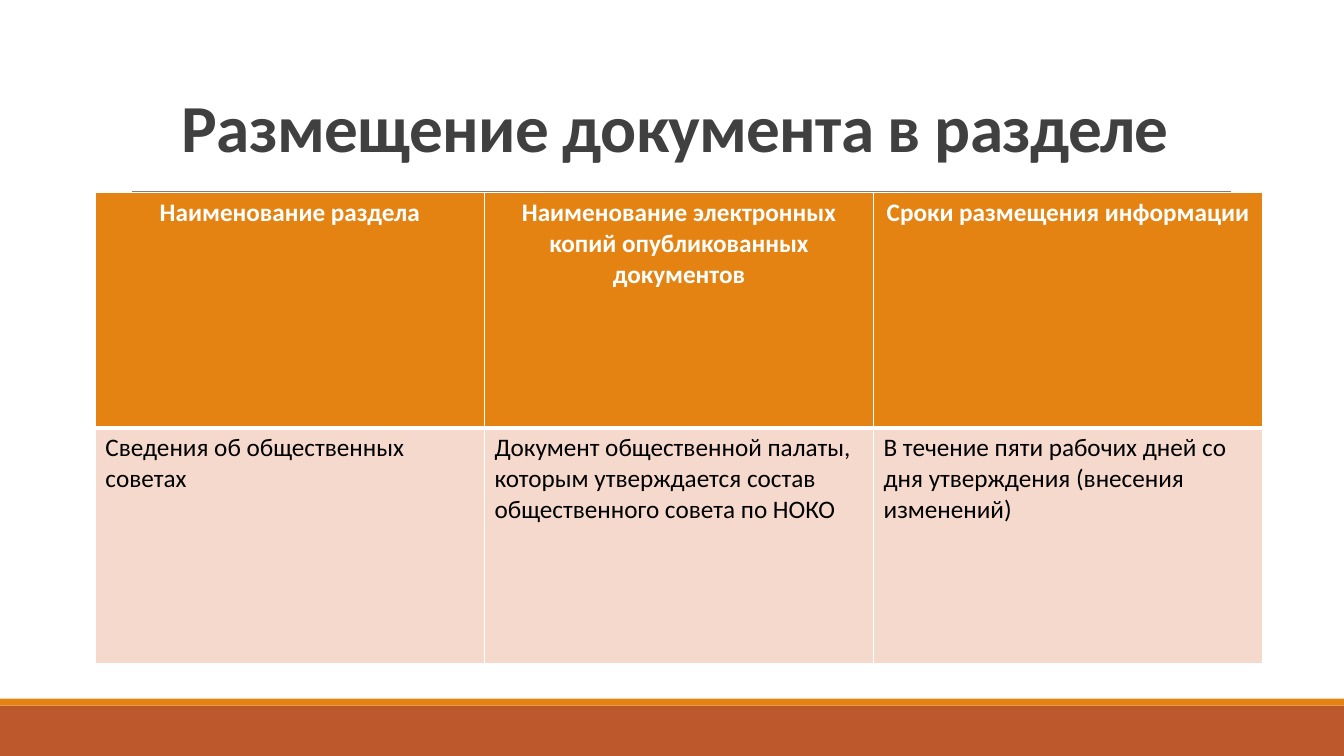
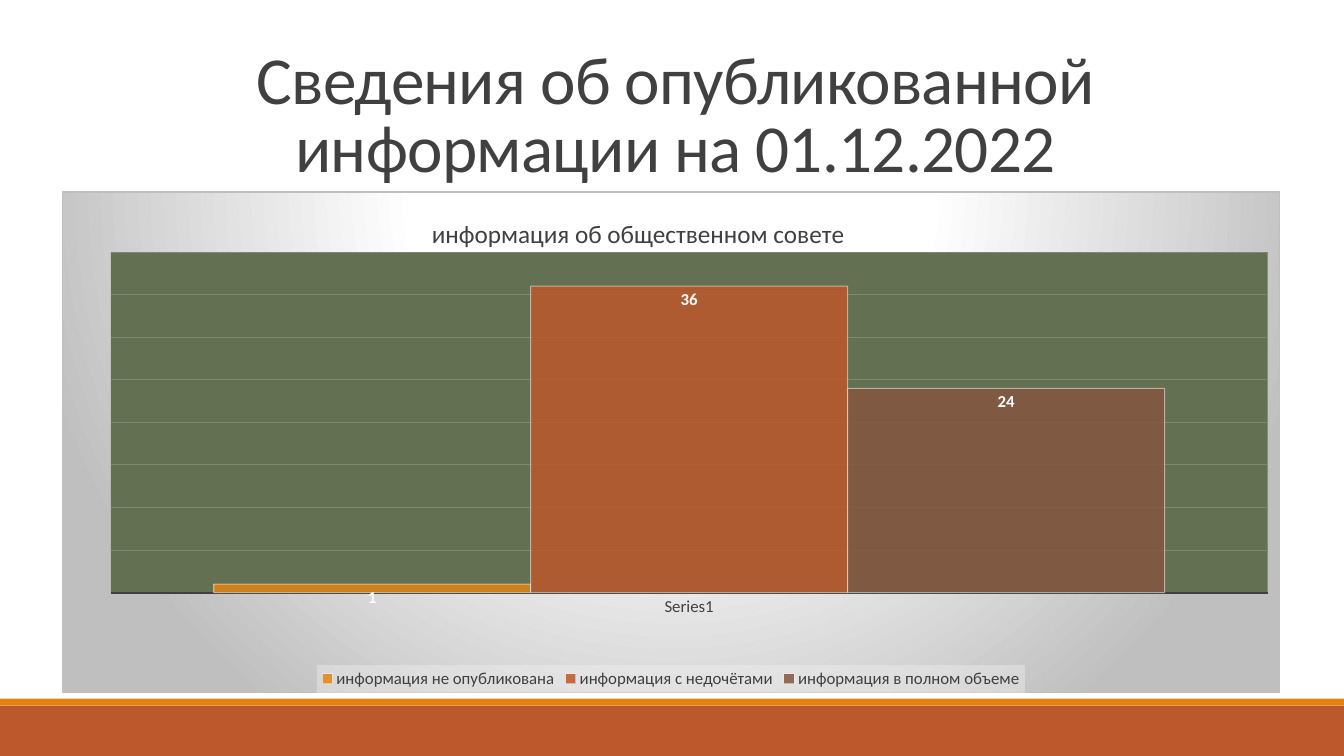
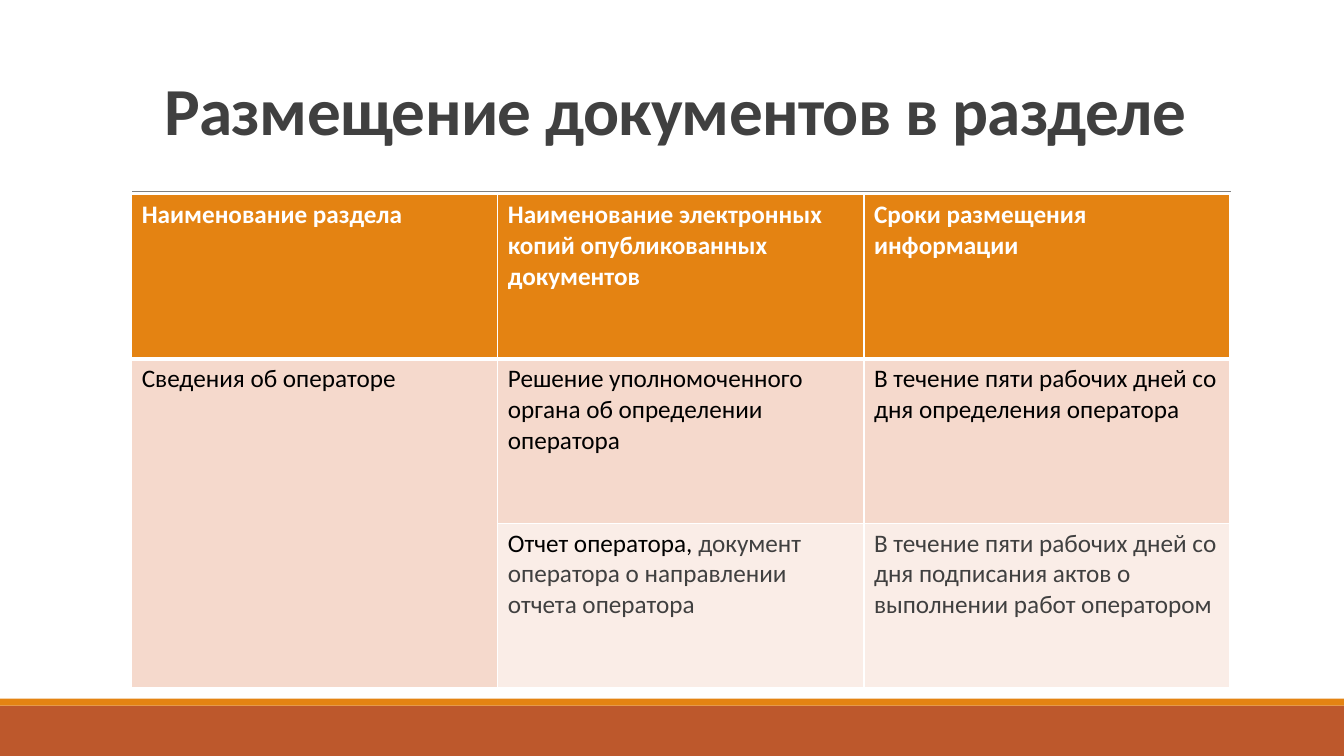
from lxml import etree
from pptx import Presentation
from pptx.chart.data import CategoryChartData
from pptx.dml.color import RGBColor
from pptx.enum.chart import (XL_CHART_TYPE, XL_LABEL_POSITION,
                             XL_LEGEND_POSITION, XL_TICK_MARK)
from pptx.enum.shapes import MSO_CONNECTOR, MSO_SHAPE
from pptx.enum.text import MSO_ANCHOR, MSO_AUTO_SIZE, PP_ALIGN
from pptx.oxml import parse_xml
from pptx.oxml.ns import nsdecls, qn
from pptx.util import Inches, Pt

COLUMNS = XL_CHART_TYPE.COLUMN_CLUSTERED
IN_END = XL_LABEL_POSITION.INSIDE_END
BELOW = XL_LEGEND_POSITION.BOTTOM
NO_TICK = XL_TICK_MARK.NONE
LINE, RECT = MSO_CONNECTOR.STRAIGHT, MSO_SHAPE.RECTANGLE
LOW, NO_FIT = MSO_ANCHOR.BOTTOM, MSO_AUTO_SIZE.NONE
LEFT, MID = PP_ALIGN.LEFT, PP_ALIGN.CENTER

WHITE = RGBColor(0xFF, 0xFF, 0xFF)
BLACK = RGBColor(0, 0, 0)
DARK = RGBColor(0x40, 0x40, 0x40)
GREY = RGBColor(0x80, 0x80, 0x80)
SILVER = RGBColor(0xBF, 0xBF, 0xBF)
PALE = RGBColor(0xF2, 0xF2, 0xF2)
ORANGE = RGBColor(0xE4, 0x83, 0x12)
RUST = RGBColor(0xBD, 0x58, 0x2C)
BROWN = RGBColor(0x86, 0x56, 0x40)
GREEN = RGBColor(0x63, 0x70, 0x52)
GRID = RGBColor(0x7D, 0x89, 0x70)
PEACH = RGBColor(0xF5, 0xD9, 0xCC)
CREAM = RGBColor(0xFA, 0xED, 0xE7)

FONT = "Calibri"
WIDE, HIGH = Inches(13.333), Inches(7.5)
COL, ROW = WIDE / 100, HIGH / 100  # grid of 100 columns and 100 rows


def box(left, top, width, height):
    """Grid columns and rows to lengths."""
    return [round(n) for n in (left * COL, top * ROW, width * COL, height * ROW)]


def style(font, size, color, bold=False):
    look = {"name": FONT, "size": Pt(size), "bold": bold}
    for key, value in look.items():
        setattr(font, key, value)
    font.color.rgb = color


# Shared look
def dress(slide):
    """Put the bands and the rule on the slide's layout."""
    layout = slide.slide_layout
    for holder in list(layout.placeholders):
        if holder.placeholder_format.idx:
            holder.element.getparent().remove(holder.element)
    parts = []
    for top, height, color in ((93.33, 6.67, RUST), (92.4, 0.93, ORANGE)):
        band = slide.shapes.add_shape(RECT, *box(0, top, 100, height))
        band.shadow.inherit = False
        band.fill.solid()
        band.fill.fore_color.rgb = color
        band.line.fill.background()
        parts.append(band)
    left, top, width, _ = box(9.83, 25.33, 81.75, 0)
    rule = slide.shapes.add_connector(LINE, left, top, left + width, top)
    rule.line.color.rgb = GREY
    rule.line.width = Pt(0.5)
    etree.SubElement(rule.element.spPr, qn("a:effectLst"))
    parts.append(rule)
    for part in parts:
        layout.shapes.element.append(part.element)


def head(slide, text, rows, bold):
    title = slide.shapes.title
    place = box(9, 4.13, 82.5, rows)
    for key, value in zip(("left", "top", "width", "height"), place):
        setattr(title, key, value)
    frame = title.text_frame
    frame.text = text
    look = {"word_wrap": True, "auto_size": NO_FIT, "vertical_anchor": LOW}
    for key, value in look.items():
        setattr(frame, key, value)
    para = frame.paragraphs[0]
    para.alignment, para.line_spacing = MID, 0.85
    run = para.runs[0]
    style(run.font, 48, DARK, bold)
    run._r.get_or_add_rPr().set("spc", "-50")


# Table
def edge(cell, base):
    """White cell borders; base is the width of the lower one."""
    props = cell._tc.get_or_add_tcPr()
    for side, width in zip("LRTB", (1, 1, 1, base)):
        props.append(parse_xml(
            f'<a:ln{side} {nsdecls("a")} w="{Pt(width)}"><a:solidFill>'
            f'<a:srgbClr val="{WHITE}"/></a:solidFill></a:ln{side}>'))


def grid(slide, place, rows, align):
    """Rows hold cells; a cell is a list of (text, colour) runs."""
    count = len(rows[0])
    left, top, width, height = place
    table = slide.shapes.add_table(len(rows), count, *place).table
    for col in table.columns:
        col.width = round(width / count)
    for i, row in enumerate(rows):
        table.rows[i].height = round(height / len(rows))
        for j, runs in enumerate(row):
            cell = table.cell(i, j)
            edge(cell, 1 if i else 3)
            cell.fill.solid()
            cell.fill.fore_color.rgb = (ORANGE, PEACH, CREAM)[i]
            para = cell.text_frame.paragraphs[0]
            para.alignment = LEFT if i else align
            for text, color in runs:
                run = para.add_run()
                run.text = text
                style(run.font, 18, color, i == 0)
    return table


# Chart
def pin(node, spot, **shares):
    """Set a manual layout in a chart part."""
    old = node.find(qn("c:layout"))
    if old is not None:
        node.remove(old)
    inner = '<c:layoutTarget val="inner"/>' if "w" in shares else ""
    modes = "".join(f'<c:{k}Mode val="edge"/>' for k in "xy")
    sizes = "".join(f'<c:{k} val="{v}"/>' for k, v in shares.items())
    node.insert(spot, parse_xml(
        f'<c:layout {nsdecls("c")}><c:manualLayout>{inner}{modes}{sizes}'
        '</c:manualLayout></c:layout>'))


def paint(fill, line="<a:ln><a:noFill/></a:ln>"):
    return parse_xml(f'<c:spPr {nsdecls("c", "a")}>{fill}{line}</c:spPr>')


def solid(color, alpha=100):
    return (f'<a:solidFill><a:srgbClr val="{color}"><a:alpha val="{alpha * 1000}"/>'
            '</a:srgbClr></a:solidFill>')


def back(chart):
    """Backgrounds of the chart, its plot area and its legend."""
    stops = "".join(f'<a:gs pos="{spot * 1000}"><a:srgbClr val="{color}"/></a:gs>'
                    for spot, color in ((0, WHITE), (39, WHITE), (100, SILVER)))
    glow = (f'<a:gradFill><a:gsLst>{stops}</a:gsLst><a:path path="circle">'
            '<a:fillToRect l="50000" t="-80000" r="50000" b="180000"/>'
            '</a:path></a:gradFill>')
    frame = f'<a:ln w="{Pt(0.75)}">{solid(SILVER)}</a:ln>'
    root = chart._chartSpace.find(qn("c:chart"))
    root.addnext(paint(glow, frame))
    plot = root.find(qn("c:plotArea"))
    pin(plot, 0, x=0.04, y=0.12, w=0.95, h=0.68)
    plot.append(paint(solid(GREEN)))
    mark = chart.legend._element.find(qn("c:overlay"))
    mark.addnext(paint(solid(PALE, 39)))


def bars(slide, place, title, series):
    data = CategoryChartData()
    data.categories = ["Series1"]
    for name, value, _ in series:
        data.add_series(name, [value])
    chart = slide.shapes.add_chart(COLUMNS, *place, data).chart
    style(chart.font, 10, BLACK)

    # Title and legend
    chart.has_title = True
    head = chart.chart_title
    head.text_frame.text = title
    style(head.text_frame.paragraphs[0].runs[0].font, 18, DARK)
    pin(head._element, 1, x=0.3, y=0.04)
    chart.has_legend = True
    chart.legend.position = BELOW
    chart.legend.include_in_layout = False
    style(chart.legend.font, 12, DARK)

    # Axes
    base, scale = chart.category_axis, chart.value_axis
    base.major_tick_mark = NO_TICK
    style(base.tick_labels.font, 12, DARK)
    look = {"visible": False, "has_major_gridlines": True,
            "minimum_scale": 0, "maximum_scale": 40, "major_unit": 5}
    for key, value in look.items():
        setattr(scale, key, value)
    lines = ((base.format.line, DARK, 1.5),
             (scale.major_gridlines.format.line, GRID, 0.75))
    for line, color, width in lines:
        line.color.rgb, line.width = color, Pt(width)

    # Bars
    plot = chart.plots[0]
    plot.gap_width, plot.overlap, plot.vary_by_categories = 65, 0, False
    for bar, (_, _, color) in zip(plot.series, series):
        form = bar.format
        form.fill.solid()
        form.fill.fore_color.rgb = color
        form.line.color.rgb, form.line.width = WHITE, Pt(0.75)
        tints = list(bar._element.iter(qn("a:srgbClr")))
        for tint, share in zip(tints, (85, 50)):
            etree.SubElement(tint, qn("a:alpha")).set("val", str(share * 1000))
        label = bar.data_labels
        label.show_value, label.position = True, IN_END
        style(label.font, 12, WHITE, True)
    back(chart)


def main():
    deck = Presentation()
    deck.slide_width, deck.slide_height = WIDE, HIGH
    first, second, third = [deck.slides.add_slide(deck.slide_layouts[5])
                            for _ in range(3)]
    dress(first)
    names = [[(text, WHITE)] for text in (
        "Наименование раздела",
        "Наименование электронных копий опубликованных документов",
        "Сроки размещения информации")]

    # Council table
    head(first, "Размещение документа в разделе", 18.53, True)
    grid(first, box(7.1, 25.47, 86.85, 62.27), [names, [
        [("Сведения об общественных советах", BLACK)],
        [("Документ общественной палаты, которым утверждается состав "
          "общественного совета по НОКО", BLACK)],
        [("В течение пяти рабочих дней со дня утверждения "
          "(внесения изменений)", BLACK)]]], MID)

    # Council chart
    head(second, "Сведения об опубликованной информации на 01.12.2022",
         21.2, False)
    bars(second, box(4.58, 25.33, 90.68, 66.4),
         "информация об общественном совете",
         [("информация не опубликована", 1, ORANGE),
          ("информация с недочётами", 36, RUST),
          ("информация в полном объеме", 24, BROWN)])

    # Operator table
    head(third, "Размещение документов в разделе", 16.27, True)
    table = grid(third, box(9.8, 25.73, 81.72, 65.2), [names, [
        [("Сведения об операторе", BLACK)],
        [("Решение уполномоченного органа об определении оператора", BLACK)],
        [("В течение пяти рабочих дней со дня определения оператора", BLACK)],
    ], [
        [],
        [("Отчет оператора,", BLACK),
         (" документ оператора о направлении отчета оператора", DARK)],
        [("В течение пяти рабочих дней со дня подписания актов о выполнении "
          "работ оператором", DARK)]]], LEFT)
    table.cell(1, 0).merge(table.cell(2, 0))

    deck.save("out.pptx")


if __name__ == "__main__":
    main()
